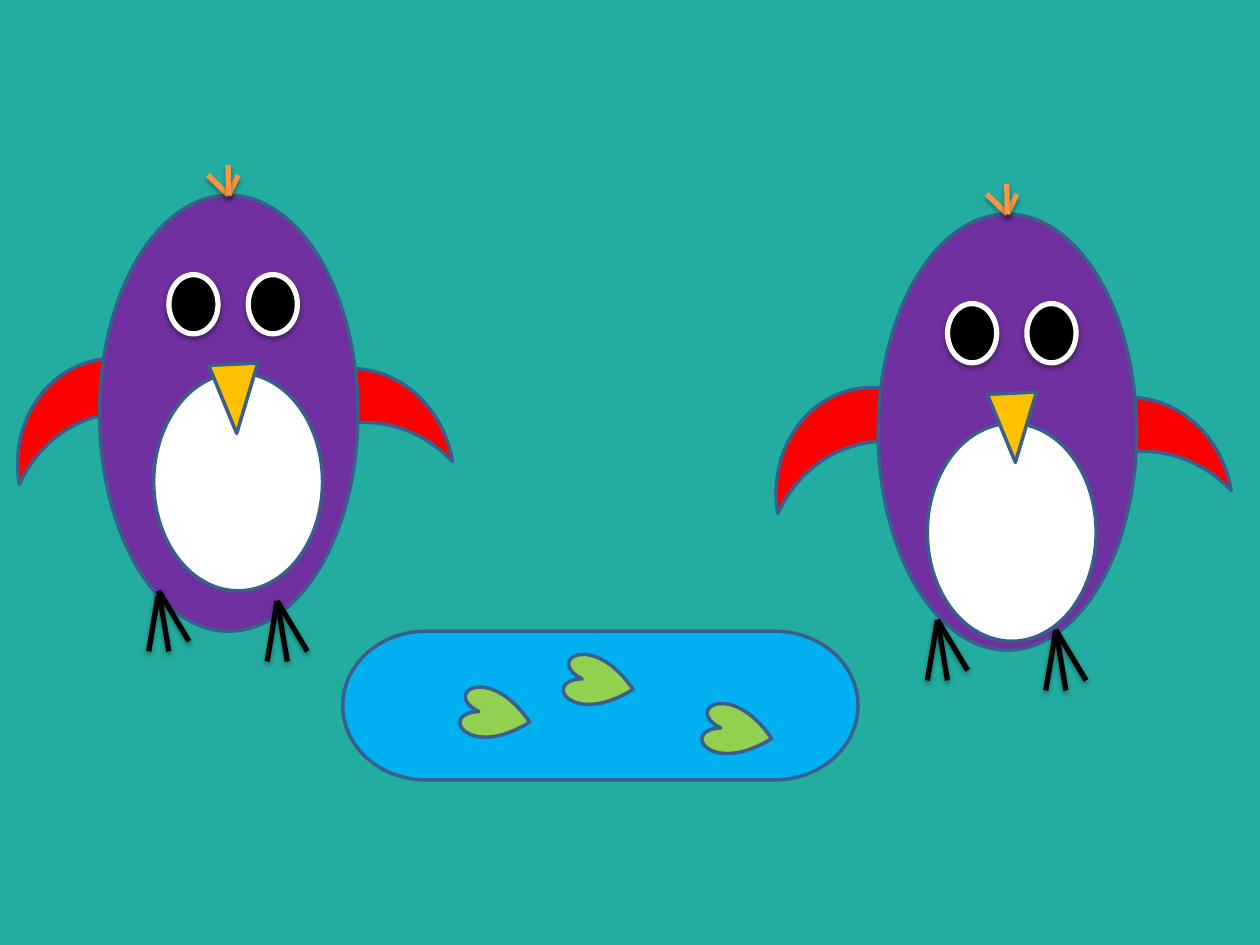
from lxml import etree
from pptx import Presentation
from pptx.dml.color import RGBColor
from pptx.enum import shapes as kinds
from pptx.oxml import ns
from pptx.util import Inches, Pt

TEAL = RGBColor(0x23, 0xAD, 0xA0)
OUTLINE = RGBColor(0x3A, 0x5F, 0x8C)
PURPLE = RGBColor(0x70, 0x30, 0xA0)
RED = RGBColor(0xFF, 0x00, 0x00)
WHITE = RGBColor(0xFF, 0xFF, 0xFF)
BLACK = RGBColor(0x00, 0x00, 0x00)
GOLD = RGBColor(0xFF, 0xC0, 0x00)
ORANGE = RGBColor(0xF7, 0x96, 0x46)
BLUE = RGBColor(0x00, 0xB0, 0xF0)
GREEN = RGBColor(0x92, 0xD0, 0x50)
KIND = kinds.MSO_SHAPE


def add_shadow(element, distance, opacity):
    properties = element._element.spPr
    for old in properties.findall(ns.qn("a:effectLst")):
        properties.remove(old)
    effects = etree.SubElement(properties, ns.qn("a:effectLst"))
    shadow = etree.SubElement(
        effects, ns.qn("a:outerShdw"), blurRad=str(Pt(3.1)),
        dist=str(Pt(distance)), dir="5400000", rotWithShape="0")
    color = etree.SubElement(shadow, ns.qn("a:srgbClr"), val=str(BLACK))
    etree.SubElement(color, ns.qn("a:alpha"), val=str(opacity * 1000))


def add_figure(page, kind, left, top, size, fill, rotation=0, line=OUTLINE, weight=2):
    width, height = size
    figure = page.shapes.add_shape(
        kind, Inches(left), Inches(top), Inches(width), Inches(height))
    figure.rotation = rotation
    figure.shadow.inherit = False
    figure.fill.solid()
    figure.fill.fore_color.rgb = fill
    figure.line.color.rgb = line
    figure.line.width = Pt(weight)
    return figure


def add_stroke(page, start, end, color):
    stroke = page.shapes.add_connector(
        kinds.MSO_CONNECTOR.STRAIGHT, *(Inches(value) for value in start + end))
    stroke.line.color.rgb = color
    stroke.line.width = Pt(3)
    add_shadow(stroke, 1.8, 35)
    return stroke


def add_toes(page, ankle, offsets):
    x, y = ankle
    for dx, dy in offsets:
        add_stroke(page, ankle, (x + dx, y + dy), BLACK)


def add_wing(page, left, top):
    add_figure(page, KIND.MOON, left, top, (0.87, 1.57), RED, 80.4)


def add_eye(page, left, top):
    eye = add_figure(page, KIND.FLOWCHART_CONNECTOR, left, top, (0.39, 0.47),
                     BLACK, line=WHITE, weight=3)
    add_shadow(eye, 1.6, 38)


def add_crest(page, body, x, y):
    for dx, dy in ((-0.16, -0.16), (0.08, -0.16), (0, -0.24)):
        feather = add_stroke(page, (x + dx, y + dy), (x, y), ORANGE)
        feather.end_connect(body, 0)


def add_penguin(page, left, top, drop, wing_left, belly):
    level = top + drop
    left_ankle = (left + 0.47, level + 3.14)
    right_ankle = (left + 1.41, level + 3.22)
    outer, middle, inner = (-0.08, 0.48), (0.08, 0.48), (0.24, 0.4)

    add_toes(page, left_ankle, [outer])
    add_wing(page, wing_left, level + 0.95)
    add_wing(page, left + 1.52, level + 1.03)
    body = add_figure(page, KIND.FLOWCHART_CONNECTOR, left, top, (2.05, 3.46), PURPLE)
    for dx in (0.55, 1.18):
        add_eye(page, left + dx, level + 0.63)
    add_toes(page, left_ankle, [inner, middle])
    add_toes(page, right_ankle, [outer, inner, middle])
    add_crest(page, body, left + 1.02, top)
    add_figure(page, KIND.FLOWCHART_CONNECTOR, *belly, (1.34, 1.73), WHITE)
    add_figure(page, KIND.ISOSCELES_TRIANGLE, left + 0.88, level + 1.34,
               (0.39, 0.55), GOLD, 177.2)


def add_pond(page):
    add_figure(page, KIND.FLOWCHART_TERMINATOR, 2.72, 5.01, (4.09, 1.18), BLUE)
    for left, top in ((3.74, 5.4), (4.56, 5.14), (5.66, 5.53)):
        add_figure(page, KIND.HEART, left, top, (0.39, 0.55), GREEN, 281.8)


def main():
    deck = Presentation()
    deck.slide_width, deck.slide_height = Inches(10), Inches(7.5)
    page = deck.slides.add_slide(deck.slide_layouts[6])
    page.background.fill.solid()
    page.background.fill.fore_color.rgb = TEAL
    add_penguin(page, 0.79, 1.55, 0, 0.42, (1.22, 2.96))
    add_penguin(page, 6.97, 1.7, 0.08, 6.44, (7.36, 3.36))
    add_pond(page)
    deck.save("out.pptx")


if __name__ == "__main__":
    main()
